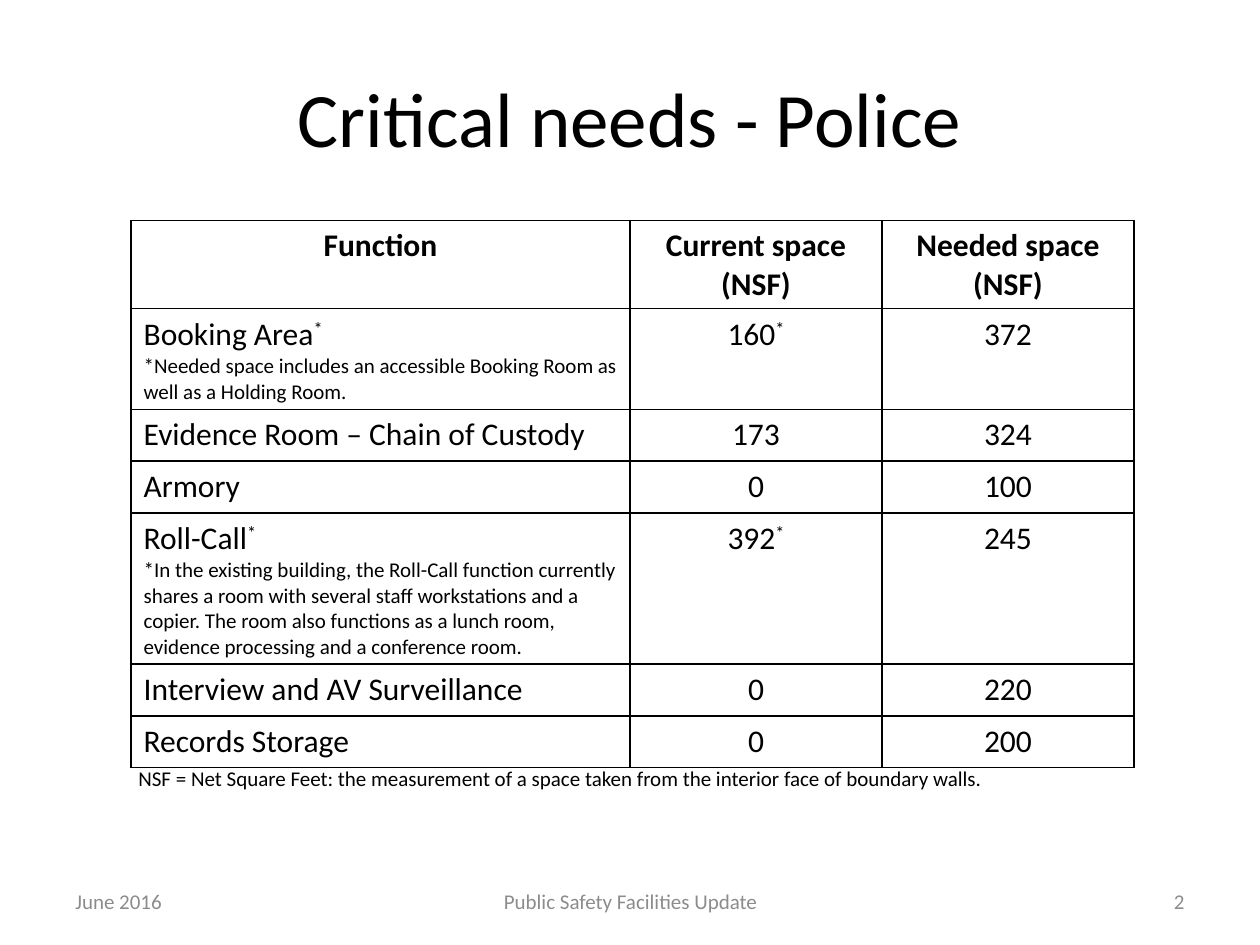
from dataclasses import dataclass

from lxml import etree
from pptx import Presentation
from pptx import util as u
from pptx.dml.color import RGBColor
from pptx.enum import text
from pptx.oxml.ns import qn

LEFT, CENTER, RIGHT = (text.PP_ALIGN.LEFT, text.PP_ALIGN.CENTER,
                       text.PP_ALIGN.RIGHT)


@dataclass(frozen=True)
class Theme:
    font: str = "Calibri"
    ink: str = "000000"
    muted: str = "8C8C8C"
    title: int = 44
    body: int = 18
    small: int = 12
    rule: int = 1


class SlideBuilder:
    def __init__(self, prs, theme):
        self.theme = theme
        self.slide = prs.slides.add_slide(prs.slide_layouts[6])

    def run(self, p, words, size, color=None, bold=False, superscript=False):
        r = p.add_run()
        r.text = words
        r.font.name, r.font.size, r.font.bold = self.theme.font, u.Pt(size), bold
        r.font.color.rgb = RGBColor.from_string(color or self.theme.ink)
        if superscript:
            r._r.get_or_add_rPr().set("baseline", "30000")

    def text_box(self, words, box, size, color=None, align=LEFT,
                 anchor=text.MSO_ANCHOR.MIDDLE):
        tf = self.slide.shapes.add_textbox(*map(u.Inches, box)).text_frame
        tf.word_wrap = True
        tf.vertical_anchor = anchor
        p = tf.paragraphs[0]
        p.alignment = align
        self.run(p, words, size, color)

    def borders(self, cell):
        tc_pr = cell._tc.get_or_add_tcPr()
        for i, side in enumerate(("lnL", "lnR", "lnT", "lnB")):
            ln = etree.Element(qn(f"a:{side}"), w=str(u.Pt(self.theme.rule)))
            fill = etree.SubElement(ln, qn("a:solidFill"))
            etree.SubElement(fill, qn("a:srgbClr"), val=self.theme.ink)
            tc_pr.insert(i, ln)

    def cell(self, cell, lines, align, header):
        """Fill a cell; a closing * is raised, a line opening with * is a note."""
        cell.fill.background()
        self.borders(cell)
        tf = cell.text_frame
        for i, line in enumerate(lines.split("\n")):
            p = tf.add_paragraph() if i else tf.paragraphs[0]
            p.alignment = align
            size = self.theme.small if line.startswith("*") else self.theme.body
            self.run(p, line.removesuffix("*"), size, bold=header)
            if line.endswith("*"):
                self.run(p, "*", size, superscript=True)

    def table(self, rows, left, top, widths, row_height):
        box = (left, top, sum(widths), row_height * len(rows))
        table = self.slide.shapes.add_table(
            len(rows), len(widths), *map(u.Inches, box)).table
        table.first_row = table.horz_banding = False
        for column, width in zip(table.columns, widths):
            column.width = u.Inches(width)
        for i, row in enumerate(rows):
            table.rows[i].height = u.Inches(row_height)
            for j, lines in enumerate(row):
                align = CENTER if i == 0 or j > 0 else LEFT
                self.cell(table.cell(i, j), lines, align, header=i == 0)


NEEDS = [
    ("Function", "Current space\n(NSF)", "Needed space\n(NSF)"),
    ("Booking Area*\n*Needed space includes an accessible Booking Room as "
     "well as a Holding Room.", "160*", "372"),
    ("Evidence Room – Chain of Custody", "173", "324"),
    ("Armory", "0", "100"),
    ("Roll-Call*\n*In the existing building, the Roll-Call function currently "
     "shares a room with several staff workstations and a copier. The room "
     "also functions as a lunch room, evidence processing and a conference "
     "room.", "392*", "245"),
    ("Interview and AV Surveillance", "0", "220"),
    ("Records Storage", "0", "200"),
]

FOOTER = [
    ("June 2016", 0.5, 2.33, LEFT),
    ("Public Safety Facilities Update", 3.42, 3.17, CENTER),
    ("2", 7.17, 2.33, RIGHT),
]


def main():
    prs = Presentation()
    prs.slide_width, prs.slide_height = u.Inches(10), u.Inches(7.5)
    theme = Theme()
    s = SlideBuilder(prs, theme)
    s.text_box("Critical needs - Police", (0.5, 0.3, 9, 1.25), theme.title,
               align=CENTER)
    s.table(NEEDS, 1.04, 1.75, (3.96, 2, 2), 0.41)
    for words, left, width, align in FOOTER:
        s.text_box(words, (left, 6.95, width, 0.4), theme.small, theme.muted,
                   align)
    s.text_box("NSF = Net Square Feet: the measurement of a space taken from "
               "the interior face of boundary walls.", (1, 6.03, 7.67, 0.3),
               theme.small, anchor=text.MSO_ANCHOR.TOP)
    prs.save("out.pptx")


if __name__ == "__main__":
    main()
